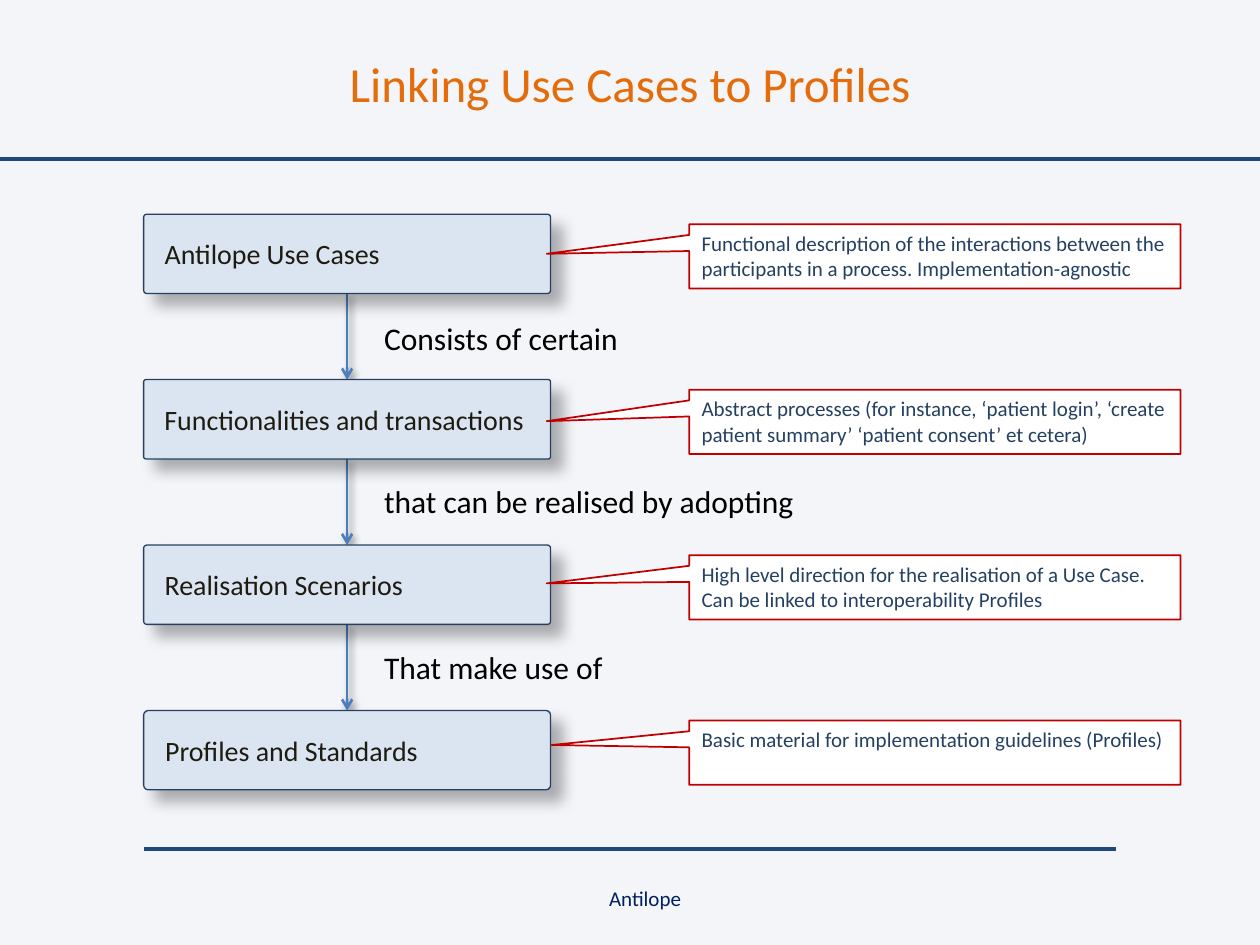
from lxml import etree
from pptx import Presentation
from pptx.dml.color import RGBColor
from pptx.enum import shapes, text
from pptx.oxml.ns import qn
from pptx.util import Inches, Pt

COLOURS = {
    "background": "F3F5F9", "rule": "1F497D", "arrow": "4B7EBC",
    "title": "E46C0A", "footer": "002060", "label": "000000",
    "step": "DBE5F1", "step line": "254061", "step text": "1E1C11",
    "note": "FFFFFF", "note line": "C00000", "note text": "254061",
    "shadow": "000000",
}
FONT = "Calibri"
TITLE = "Linking Use Cases to Profiles"
FOOTER = "Antilope"

# name, corner rounding, note paragraphs, note pointer (x, y)
STEPS = [
    ("Antilope Use Cases", 0.04,
     ["Functional description of the interactions between the participants "
      "in a process. Implementation-agnostic"], (-0.79, -0.04)),
    ("Functionalities and transactions", 0.03,
     ["Abstract processes (for instance, ‘patient login’, ‘create patient "
      "summary’ ‘patient consent’ et cetera)"], (-0.79, -0.01)),
    ("Realisation Scenarios", 0.04,
     ["High level direction for the realisation of a Use Case.",
      "Can be linked to interoperability Profiles"], (-0.79, -0.06)),
    ("Profiles and Standards", 0.06,
     ["Basic material for implementation guidelines (Profiles)"], (-0.78, -0.12)),
]
# text, top, width, wraps
LINKS = [
    ("Consists of certain", 2.48, 4.96, True),
    ("that can be realised by adopting", 3.78, 3.62, False),
    ("That make use of", 5.09, 1.96, False),
]
RULES = [(1.14, 8.86, 6.74), (0, 10, 1.26)]

STEP_LEFT, STEP_TOP, STEP_WIDTH, STEP_HEIGHT = 1.14, 1.7, 3.23, 0.63
STEP_PITCH = 1.313
NOTE_LEFT, NOTE_OFFSET, NOTE_WIDTH, NOTE_HEIGHT = 5.47, 0.08, 3.9, 0.51
LABEL_LEFT = 2.95


def colour(name):
    return RGBColor.from_string(COLOURS[name])


def write(shape, paragraphs, size, colour_name, align=text.PP_ALIGN.LEFT, **frame_format):
    frame = shape.text_frame
    for name, value in {"word_wrap": True, **frame_format}.items():
        setattr(frame, name, value)
    frame.text = "\n".join(paragraphs)
    for para in frame.paragraphs:
        para.alignment = align
        for name, value in {"name": FONT, "size": Pt(size)}.items():
            setattr(para.font, name, value)
        para.font.color.rgb = colour(colour_name)


def set_effects(shape, opacity=None, blur=0, distance=0):
    """Replace the theme effects with a 45° shadow, or none without opacity."""
    properties = shape._element.spPr
    for old in properties.findall(qn("a:effectLst")):
        properties.remove(old)
    effects = etree.SubElement(properties, qn("a:effectLst"))
    if opacity:
        shadow = etree.SubElement(
            effects, qn("a:outerShdw"), blurRad=str(Pt(blur)), dist=str(Pt(distance)),
            dir=str(45 * 60000), algn="tl", rotWithShape="0")
        tint = etree.SubElement(shadow, qn("a:srgbClr"), val=COLOURS["shadow"])
        etree.SubElement(tint, qn("a:alpha"), val=str(opacity * 1000))


def add_line(page, x1, y1, x2, y2, colour_name, width):
    line = page.shapes.add_connector(
        shapes.MSO_CONNECTOR.STRAIGHT, *map(Inches, (x1, y1, x2, y2)))
    line.line.color.rgb = colour(colour_name)
    line.line.width = Pt(width)
    set_effects(line)
    return line


def add_arrow(page, x, top, bottom):
    arrow = add_line(page, x, top, x, bottom, "arrow", 1.5)
    etree.SubElement(arrow.line._get_or_add_ln(), qn("a:tailEnd"), type="arrow")
    set_effects(arrow, opacity=40, blur=4, distance=3)


def add_box(page, kind, bounds, adjustments, style, width):
    box = page.shapes.add_shape(kind, *map(Inches, bounds))
    for index, value in enumerate(adjustments):
        box.adjustments[index] = value
    box.fill.solid()
    box.fill.fore_color.rgb = colour(style)
    box.line.color.rgb = colour(style + " line")
    box.line.width = Pt(width)
    box.shadow.inherit = False
    return box


def add_step(page, top, name, rounding):
    box = add_box(page, shapes.MSO_SHAPE.ROUNDED_RECTANGLE,
                  (STEP_LEFT, top, STEP_WIDTH, STEP_HEIGHT), [rounding], "step", 0.75)
    set_effects(box, opacity=30, blur=8, distance=9)
    write(box, [name], 16, "step text", vertical_anchor=text.MSO_ANCHOR.MIDDLE,
          margin_left=Inches(0.16), margin_right=Inches(0.1),
          margin_top=Inches(0.04), margin_bottom=Inches(0.04))


def add_note(page, top, paragraphs, pointer):
    box = add_box(page, shapes.MSO_SHAPE.RECTANGULAR_CALLOUT,
                  (NOTE_LEFT, top, NOTE_WIDTH, NOTE_HEIGHT), pointer, "note", 1)
    write(box, paragraphs, 12, "note text", vertical_anchor=text.MSO_ANCHOR.TOP)


def main():
    deck = Presentation()
    deck.slide_width, deck.slide_height = Inches(10), Inches(7.5)
    page = deck.slides.add_slide(deck.slide_layouts[5])
    page.background.fill.solid()
    page.background.fill.fore_color.rgb = colour("background")

    title = page.shapes.title
    title.left, title.top, title.width, title.height = map(Inches, (2.36, 0.26, 5.28, 0.79))
    write(title, [TITLE], 28, "title", text.PP_ALIGN.CENTER,
          vertical_anchor=text.MSO_ANCHOR.MIDDLE)

    for left, right, y in RULES:
        add_line(page, left, y, right, y, "rule", 2.25)

    footer = page.shapes.add_textbox(*map(Inches, (2.64, 6.98, 4.96, 0.4)))
    write(footer, [FOOTER], 12, "footer", text.PP_ALIGN.CENTER)

    tops = [STEP_TOP + index * STEP_PITCH for index in range(len(STEPS))]
    for top, next_top in zip(tops, tops[1:]):
        add_arrow(page, STEP_LEFT + STEP_WIDTH / 2, top + STEP_HEIGHT, next_top)

    for label, top, width, wraps in LINKS:
        box = page.shapes.add_textbox(*map(Inches, (LABEL_LEFT, top, width, 0.4)))
        write(box, [label], 18, "label", word_wrap=wraps,
              auto_size=text.MSO_AUTO_SIZE.SHAPE_TO_FIT_TEXT)

    for top, (name, rounding, note, pointer) in zip(tops, STEPS):
        add_step(page, top, name, rounding)
        add_note(page, top + NOTE_OFFSET, note, pointer)

    deck.save("out.pptx")


if __name__ == "__main__":
    main()
